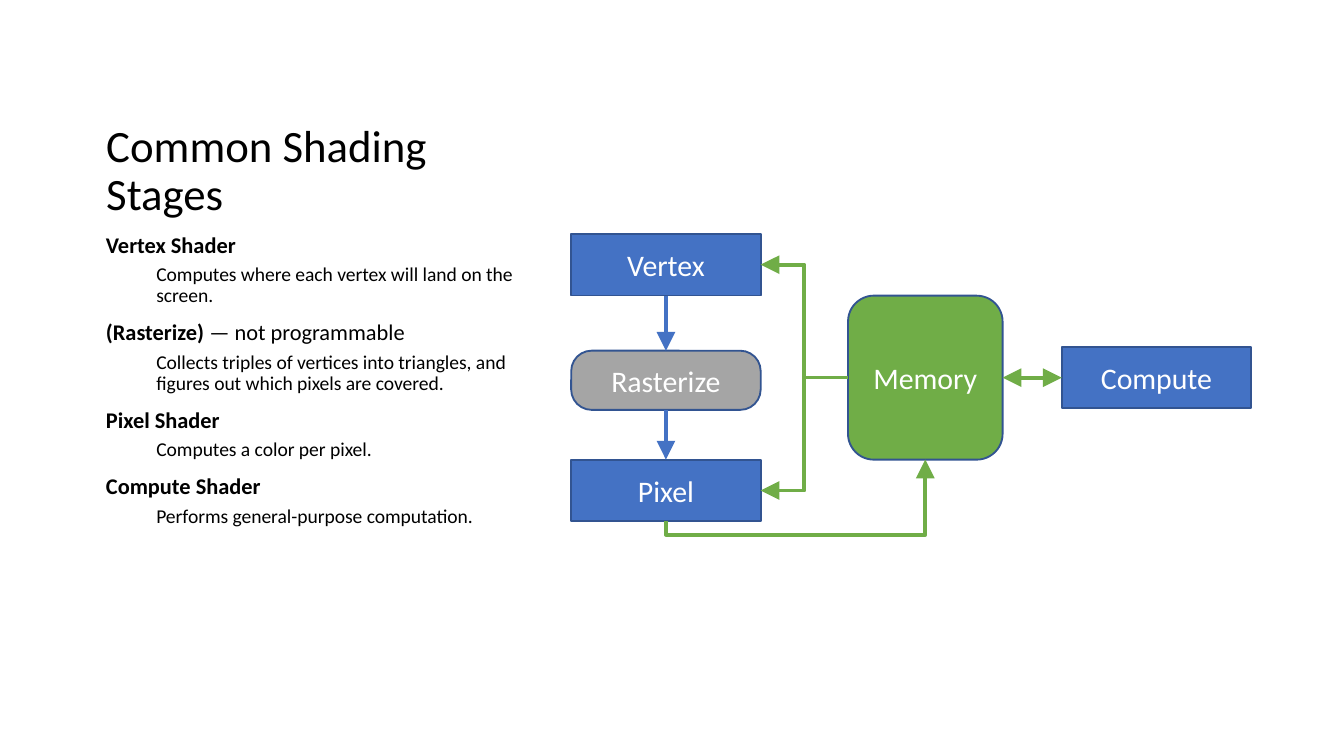
"""Build the slide on common shading stages."""
from pptx import Presentation
from pptx.dml.color import RGBColor
from pptx.enum.shapes import MSO_CONNECTOR, MSO_SHAPE
from pptx.enum.text import MSO_ANCHOR, PP_ALIGN
from pptx.oxml.ns import qn
from pptx.util import Inches, Pt
from lxml.etree import SubElement

BLACK = RGBColor(0x00, 0x00, 0x00)
WHITE = RGBColor(0xFF, 0xFF, 0xFF)
BLUE = RGBColor(0x44, 0x72, 0xC4)
NAVY = RGBColor(0x32, 0x54, 0x91)
GREEN = RGBColor(0x70, 0xAD, 0x47)
GRAY = RGBColor(0xA5, 0xA5, 0xA5)
FONT = "Calibri"
TOP, LEFT, BOTTOM, RIGHT = range(4)

STAGES = [
    ("Vertex Shader", "", "Computes where each vertex will land on the screen."),
    ("(Rasterize)", " — not programmable",
     "Collects triples of vertices into triangles, and figures out which pixels are covered."),
    ("Pixel Shader", "", "Computes a color per pixel."),
    ("Compute Shader", "", "Performs general-purpose computation."),
]


def style(run, size, color, bold=False):
    """Set the font of a run."""
    font = run.font
    font.name, font.size, font.bold = FONT, Pt(size), bold
    font.color.rgb = color


def add_title(slide, text):
    """Place and format the title."""
    title = slide.shapes.title
    title.left, title.top = Inches(0.69), Inches(0.38)
    title.width, title.height = Inches(3.23), Inches(1.31)
    frame = title.text_frame
    frame.text = text
    frame.vertical_anchor = MSO_ANCHOR.BOTTOM
    para = frame.paragraphs[0]
    para.alignment = PP_ALIGN.LEFT
    para.line_spacing = 0.9
    style(para.runs[0], 24, BLACK)


def add_para(frame, parts, size, space, indent=0):
    """Fill the next paragraph with pairs of text and bold."""
    para = frame.paragraphs[0]
    if para.runs:
        para = frame.add_paragraph()
    para.line_spacing, para.space_before = 0.9, Pt(space)
    if indent:
        para.level = 1
        para._p.get_or_add_pPr().set("marL", str(Pt(indent)))
    for text, bold in parts:
        run = para.add_run()
        run.text = text
        style(run, size, BLACK, bold)


def add_list(slide):
    """List each stage with its purpose."""
    box = slide.shapes.add_textbox(Inches(0.69), Inches(1.69), Inches(3.23), Inches(3.13))
    frame = box.text_frame
    frame.word_wrap = True
    for name, extra, purpose in STAGES:
        parts = [(name, True)] + ([(extra, False)] if extra else [])
        add_para(frame, parts, 12, 7.5)
        add_para(frame, [(purpose, False)], 10.5, 3.75, 27)


def add_box(slide, text, left, top, width=1.41, height=0.46, fill=BLUE, adjust=None):
    """Add a labelled box, rounded if adjust is given."""
    kind = MSO_SHAPE.RECTANGLE if adjust is None else MSO_SHAPE.ROUNDED_RECTANGLE
    box = slide.shapes.add_shape(kind, Inches(left), Inches(top), Inches(width), Inches(height))
    if adjust is not None:
        box.adjustments[0] = adjust
    box.shadow.inherit = False
    box.fill.solid()
    box.fill.fore_color.rgb = fill
    box.line.color.rgb, box.line.width = NAVY, Pt(1)
    frame = box.text_frame
    frame.text = text
    frame.vertical_anchor = MSO_ANCHOR.MIDDLE
    para = frame.paragraphs[0]
    para.alignment = PP_ALIGN.CENTER
    style(para.runs[0], 16, WHITE)
    return box


def paint(link, color, ends=("tailEnd",)):
    """Color a connector and give it large arrowheads."""
    link.line.color.rgb, link.line.width = color, Pt(2)
    line = link.line._get_or_add_ln()
    for end in ends:
        SubElement(line, qn("a:" + end), type="triangle", w="lg", len="lg")
    SubElement(link._element.spPr, qn("a:effectLst"))


def join(slide, start, side, end, goal, color, kind=MSO_CONNECTOR.STRAIGHT, ends=("tailEnd",)):
    """Join the sides of two boxes."""
    link = slide.shapes.add_connector(kind, 0, 0, 0, 0)
    link.begin_connect(start, side)
    link.end_connect(end, goal)
    paint(link, color, ends)


def loop(slide, start, end, drop):
    """Lead an arrow from below one box up into another."""
    x, y = start.left + start.width // 2, start.top + start.height
    far, high = end.left + end.width // 2, end.top + end.height
    mid, level = (x + far) // 2, (y + high) // 2
    wide, tall = (y - high) // 2, (far - x) // 2
    link = slide.shapes.add_connector(
        MSO_CONNECTOR.ELBOW, mid + wide, level + tall, mid - wide, level - tall)
    shape = link._element.spPr
    shape.find(qn("a:xfrm")).set("rot", "5400000")
    guides = shape.find(qn("a:prstGeom")).get_or_add_avLst()
    ratio = -round(Inches(drop) / (y - high) * 100000)
    SubElement(guides, qn("a:gd"), name="adj1", fmla=f"val {ratio}")
    paint(link, GREEN)


def add_flow(slide):
    """Draw the stages and the flow between them."""
    vertex = add_box(slide, "Vertex", 4.25, 1.74)
    pixel = add_box(slide, "Pixel", 4.25, 3.42)
    memory = add_box(slide, "Memory", 6.31, 2.2, 1.15, 1.22, GREEN, 0.167)
    for stage in (vertex, pixel):
        join(slide, memory, LEFT, stage, RIGHT, GREEN, MSO_CONNECTOR.ELBOW)
    loop(slide, pixel, memory, 0.1)
    raster = add_box(slide, "Rasterize", 4.25, 2.61, height=0.44, fill=GRAY, adjust=0.344)
    for start, end in ((vertex, raster), (raster, pixel)):
        join(slide, start, BOTTOM, end, TOP, BLUE)
    compute = add_box(slide, "Compute", 7.9, 2.58)
    join(slide, compute, LEFT, memory, RIGHT, GREEN, ends=("headEnd", "tailEnd"))


def main():
    """Build and save the deck."""
    deck = Presentation()
    deck.slide_width = Inches(10)
    deck.slide_height = deck.slide_width * 9 // 16
    slide = deck.slides.add_slide(deck.slide_layouts[5])
    add_title(slide, "Common Shading Stages")
    add_list(slide)
    add_flow(slide)
    deck.save("out.pptx")


if __name__ == "__main__":
    main()
